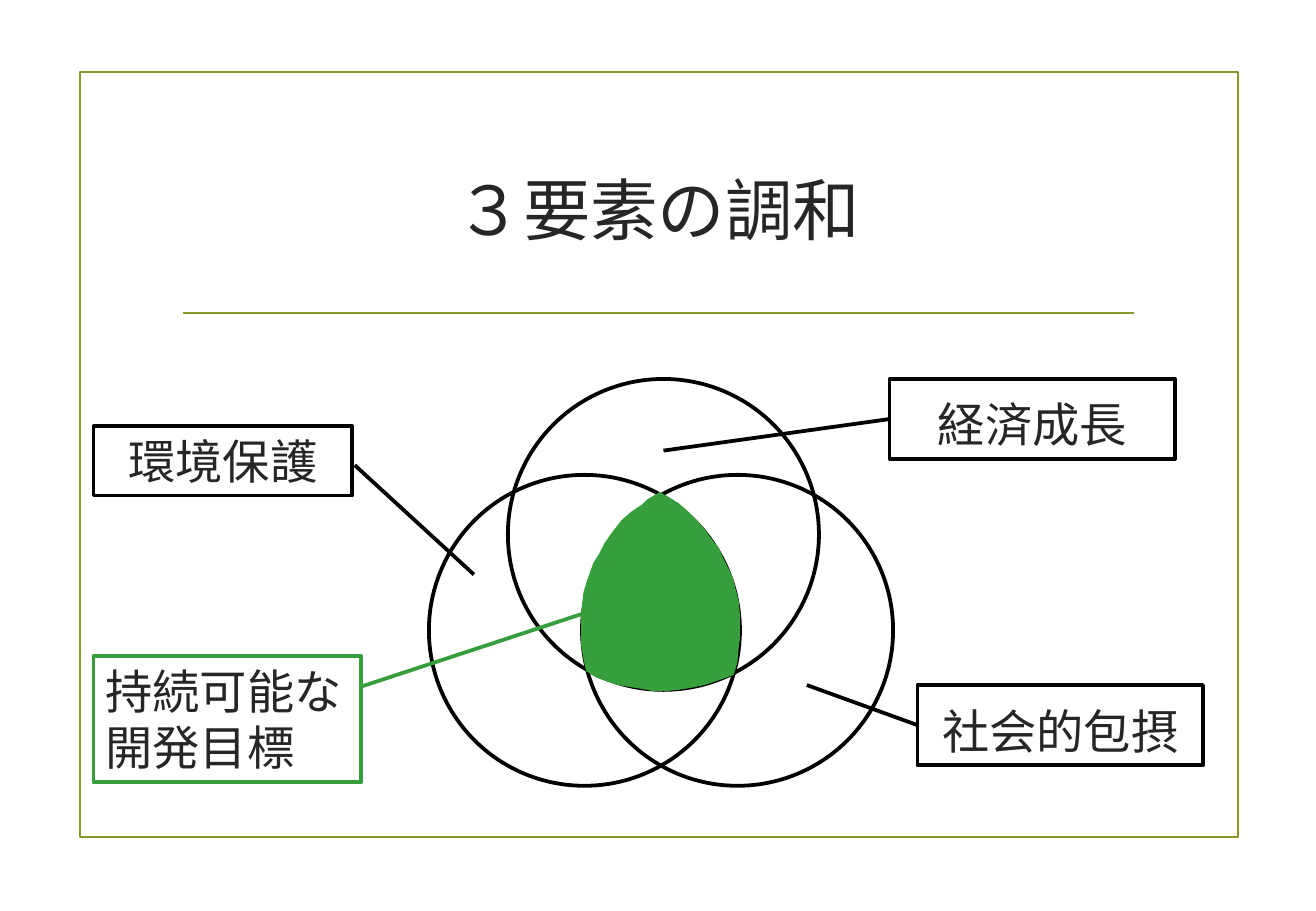
from dataclasses import dataclass

from pptx import Presentation
from pptx.dml.color import RGBColor
from pptx.enum.shapes import MSO_CONNECTOR as Link, MSO_SHAPE as Shape
from pptx.enum.text import MSO_ANCHOR as Anchor, MSO_AUTO_SIZE as Fit, PP_ALIGN as Align
from pptx.oxml.ns import qn
from pptx.util import Pt
from lxml.etree import SubElement


@dataclass(frozen=True)
class Theme:
    text: str = "262626"
    ink: str = "000000"
    goal: str = "369E3B"
    frame: str = "83992A"
    paper: str = "FFFFFF"
    title_font: str = "Times New Roman"
    body_font: str = "Noto Sans CJK JP"
    title_size: int = 40
    label_size: int = 28
    thin: float = 1.25
    thick: float = 2.25


THEME = Theme()
PX = 9144
PAGE = (1083, 750)
TITLE = ("３要素の調和", (139, 100, 805, 143))
FRAME = (66, 59, 953, 630)
TITLE_RULE = ((151, 258), (933, 258))
RADIUS = 128
CENTERS = [(546, 440), (481, 519), (607, 519)]
LABELS = [
    dict(text="持続可能な\n開発目標", at=(77, 540, 220, 104), color=THEME.goal,
         align=Align.LEFT, spacing=None, start=(298, 565), target=(541, 485), side=None),
    dict(text="環境保護", at=(77, 351, 213, 57), color=THEME.ink,
         align=Align.CENTER, spacing=None, start=(292, 383), target=(390, 473), side=None),
    dict(text="経済成長", at=(732, 312, 235, 66), color=THEME.ink,
         align=Align.CENTER, spacing=40, start=(732, 345), target=(546, 371), side=1),
    dict(text="社会的包摂", at=(755, 564, 235, 66), color=THEME.ink,
         align=Align.CENTER, spacing=40, start=(755, 597), target=(664, 564), side=1),
]
OVERLAP = [
    (483, 552), (481, 542), (479, 531), (479, 521), (479, 514), (479, 505),
    (480, 497), (481, 488), (484, 478), (489, 464), (494, 456), (498, 448),
    (505, 438), (512, 429), (520, 422), (529, 416), (533, 412), (538, 409),
    (543, 406), (558, 415), (566, 422), (572, 428), (579, 436), (584, 443),
    (591, 452), (594, 459), (598, 467), (602, 475), (605, 487), (607, 495),
    (608, 506), (608, 516), (608, 526), (607, 533), (606, 545), (604, 552),
    (603, 555), (592, 559), (580, 563), (571, 565), (559, 567), (549, 568),
    (537, 568), (532, 567), (520, 565), (508, 563), (499, 560), (491, 557),
]


def emu(values):
    return [value * PX for value in values]


def rgb(color):
    return RGBColor.from_string(color)


def set_line(shape, color, width):
    shape.line.color.rgb = rgb(color)
    shape.line.width = Pt(width)


def set_fill(shape, color):
    if color:
        shape.fill.solid()
        shape.fill.fore_color.rgb = rgb(color)
    else:
        shape.fill.background()


def style_shape(shape, color, width, fill=None):
    shape.shadow.inherit = False
    set_fill(shape, fill)
    set_line(shape, color, width)


def add_outline(page, kind, at, color, width, fill=None):
    shape = page.shapes.add_shape(kind, *emu(at))
    style_shape(shape, color, width, fill)
    return shape


def add_line(page, start, end, color, width):
    line = page.shapes.add_connector(Link.STRAIGHT, *emu(start + end))
    set_line(line, color, width)
    SubElement(line._element.spPr, qn("a:effectLst"))
    return line


def format_text(frame, font, size, align, spacing=None):
    for para in frame.paragraphs:
        para.alignment = align
        if spacing:
            para.line_spacing = Pt(spacing)
        for span in para.runs:
            span.font.name = font
            span.font.size = Pt(size)
            span.font.color.rgb = rgb(THEME.text)
            SubElement(span.font._element, qn("a:ea"), typeface=THEME.body_font)


def add_title(page):
    text, at = TITLE
    title = page.shapes.title
    title.left, title.top, title.width, title.height = emu(at)
    title.text_frame.text = text
    title.text_frame.vertical_anchor = Anchor.MIDDLE
    format_text(title.text_frame, THEME.title_font, THEME.title_size, Align.CENTER)


def add_label(page, label):
    box = add_outline(page, Shape.RECTANGLE, label["at"], label["color"],
                      THEME.thick, THEME.paper)
    frame = box.text_frame
    frame.word_wrap = True
    frame.auto_size = Fit.SHAPE_TO_FIT_TEXT
    frame.vertical_anchor = Anchor.TOP
    frame.text = label["text"]
    format_text(frame, THEME.body_font, THEME.label_size, label["align"], label["spacing"])
    line = add_line(page, label["start"], label["target"], label["color"], THEME.thick)
    if label["side"] is not None:
        line.begin_connect(box, label["side"])


def add_overlap(page):
    first, *rest = OVERLAP
    builder = page.shapes.build_freeform(*first, scale=PX)
    builder.add_line_segments(rest, close=True)
    style_shape(builder.convert_to_shape(), THEME.goal, THEME.thin, THEME.goal)


def main():
    deck = Presentation()
    deck.slide_width, deck.slide_height = emu(PAGE)
    page = deck.slides.add_slide(deck.slide_layouts[5])
    add_outline(page, Shape.RECTANGLE, FRAME, THEME.frame, THEME.thin)
    add_line(page, *TITLE_RULE, THEME.frame, THEME.thin)
    add_title(page)
    for x, y in CENTERS:
        at = (x - RADIUS, y - RADIUS, 2 * RADIUS, 2 * RADIUS)
        add_outline(page, Shape.OVAL, at, THEME.ink, THEME.thick)
    for label in LABELS:
        add_label(page, label)
    add_overlap(page)
    deck.save("out.pptx")


if __name__ == "__main__":
    main()
